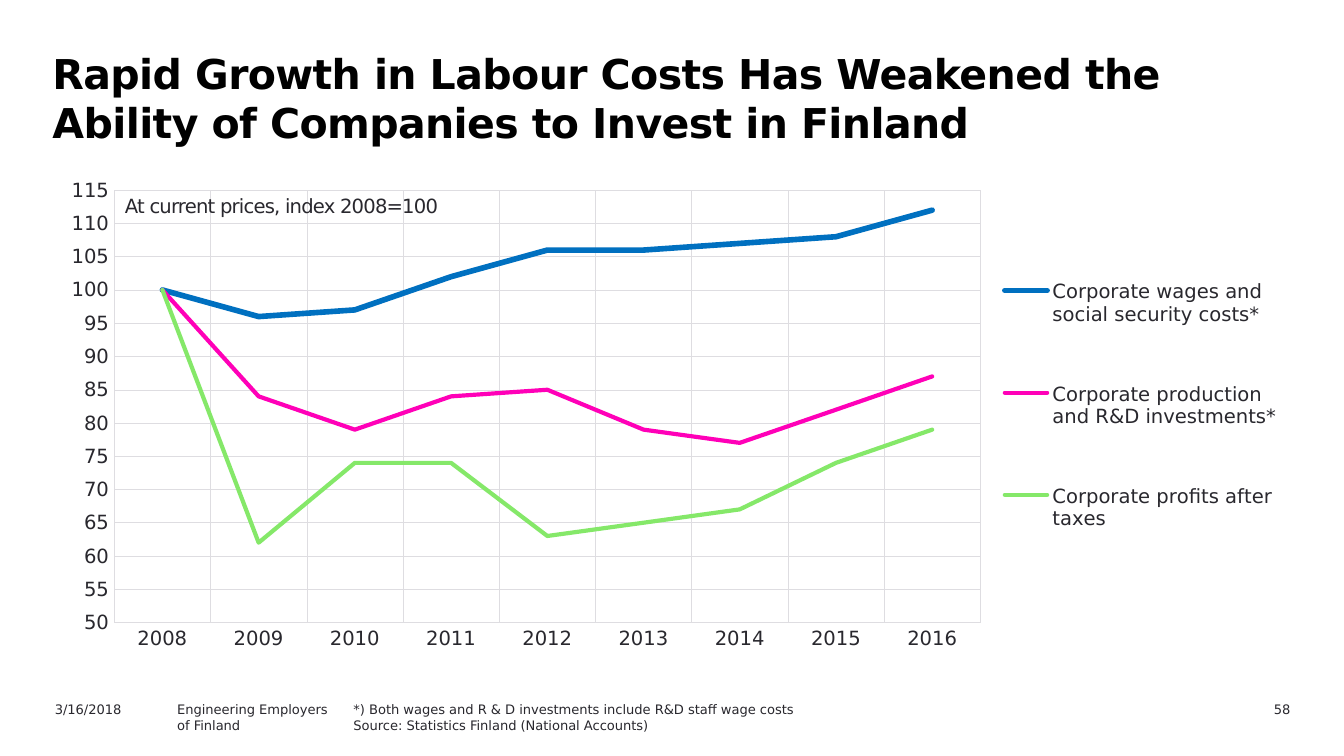
from lxml import etree
from pptx import Presentation, util as u
from pptx.chart import data
from pptx.dml import color
from pptx.enum import chart as ch, text
from pptx.oxml import ns

COLORS = {"title": "000000", "text": "29282E", "grid": "DEDDE1",
          "wages": "0070C0", "investments": "FF00B8", "profits": "85E869"}
WIDTH = 10
HEIGHT = WIDTH * 9 / 16
FOOTER_TOP = 91.9  # percent of the slide height

YEARS = [str(year) for year in range(2008, 2017)]
SERIES = [  # name, colour, line width, values
    ("Corporate wages and social security costs*", "wages", 3,
     (100, 96, 97, 102, 106, 106, 107, 108, 112)),
    ("Corporate production and R&D investments*", "investments", 2.25,
     (100, 84, 79, 84, 85, 79, 77, 82, 87)),
    ("Corporate profits after taxes", "profits", 2.25,
     (100, 62, 74, 74, 63, 65, 67, 74, 79)),
]


def rgb(name):
    return color.RGBColor.from_string(COLORS[name])


class Deck:
    """Style and current slide; areas are percentages of the slide's size."""
    font = "DejaVu Sans"

    def __init__(self):
        self.prs = Presentation()
        self.prs.slide_width = u.Inches(WIDTH)
        self.prs.slide_height = u.Inches(HEIGHT)
        self.s = self.prs.slides.add_slide(self.prs.slide_layouts[1])

    def box(self, area):
        return [u.Inches(part * side / 100)
                for part, side in zip(area, (WIDTH, HEIGHT) * 2)]

    def style(self, font, size, name="text", bold=False):
        font.name, font.size, font.bold = self.font, u.Pt(size), bold
        font.color.rgb = rgb(name)

    def fill_text(self, sp, words, size, name="text", bold=False,
                  align=text.PP_ALIGN.LEFT, spacing=0):
        tf = sp.text_frame
        tf.text = words
        tf.word_wrap = True
        tf.auto_size = text.MSO_AUTO_SIZE.NONE
        tf.vertical_anchor = text.MSO_ANCHOR.TOP
        for p in tf.paragraphs:
            p.alignment, p.space_before = align, u.Pt(0)
            for r in p.runs:
                self.style(r.font, size, name, bold)
                if spacing:
                    r.font._element.set("spc", str(round(spacing * 100)))
        return tf

    def placeholder(self, index, area, words, size, **look):
        sp = self.s.placeholders[index]
        sp.left, sp.top, sp.width, sp.height = self.box(area)
        for p in self.fill_text(sp, words, size, **look).paragraphs:
            pPr = p._p.get_or_add_pPr()
            pPr.set("marL", "0")
            pPr.set("indent", "0")
            etree.SubElement(pPr, ns.qn("a:buNone"))

    def label(self, area, words, size, **look):
        sp = self.s.shapes.add_textbox(*self.box(area))
        return self.fill_text(sp, words, size, **look)

    def place_part(self, parent, index, area, inner=False):
        """Fix a plot area or legend, in percentages of the chart."""
        for old in parent.findall(ns.qn("c:layout")):
            parent.remove(old)
        layout = etree.Element(ns.qn("c:layout"))
        manual = etree.SubElement(layout, ns.qn("c:manualLayout"))
        settings = [("layoutTarget", "inner")] if inner else []
        settings += [("xMode", "edge"), ("yMode", "edge")]
        settings += [(tag, part / 100) for tag, part in zip("xywh", area)]
        for tag, value in settings:
            etree.SubElement(manual, ns.qn("c:" + tag)).set("val", str(value))
        parent.insert(index, layout)

    def axis(self, axis):
        axis.major_tick_mark = axis.minor_tick_mark = ch.XL_TICK_MARK.NONE
        self.style(axis.tick_labels.font, 10.5)
        axis.has_major_gridlines = True
        line = axis.major_gridlines.format.line
        line.color.rgb, line.width = rgb("grid"), u.Pt(0.25)

    def line_chart(self, area, cats, series, low, high, step):
        cd = data.CategoryChartData()
        cd.categories = cats
        for name, _, _, values in series:
            cd.add_series(name, values)
        chart = self.s.shapes.add_chart(
            ch.XL_CHART_TYPE.LINE, *self.box(area), cd).chart
        self.style(chart.font, 10.5)
        chart.has_title = False
        chart.plots[0].vary_by_categories = False
        for ser, (_, name, width, _) in zip(chart.plots[0].series, series):
            ser.smooth = False
            ser.marker.style = ch.XL_MARKER_STYLE.NONE
            line = ser.format.line
            line.color.rgb, line.width = rgb(name), u.Pt(width)
            ser._element.spPr.find(ns.qn("a:ln")).set("cap", "rnd")

        # Axes
        years, values = chart.category_axis, chart.value_axis
        self.axis(years)
        self.axis(values)
        years.format.line.color.rgb = rgb("grid")
        years.format.line.width = u.Pt(0.75)
        values.format.line.fill.background()
        values.minimum_scale, values.maximum_scale = low, high
        values.major_unit = step
        values.tick_labels.number_format = "#,##0"
        values.tick_labels.number_format_is_linked = False

        # Legend and plot area
        chart.has_legend = True
        legend = chart.legend
        legend.position = ch.XL_LEGEND_POSITION.RIGHT
        legend.include_in_layout = False
        self.style(legend.font, 10.5)
        self.place_part(legend._element, 1, (76, 9, 24, 72))
        plot_area = chart._chartSpace.chart.plotArea
        self.place_part(plot_area, 0, (4.8, 2.5, 70.2, 85.5), inner=True)


def main():
    d = Deck()

    # Title
    d.placeholder(0, (2.9, 5.5, 87.4, 12.6),
                  "Rapid Growth in Labour Costs Has Weakened the "
                  "Ability of Companies to Invest in Finland",
                  22, name="title", bold=True, spacing=-0.3)

    # Chart with its unit
    d.line_chart((4.1, 23.5, 91.8, 66.9), YEARS, SERIES, 50, 115, 5)
    tf = d.label((8.9, 24.9, 39.4, 4.6),
                 "At current prices, index 2008=100", 10.5, spacing=-0.4)
    tf.margin_left = tf.margin_top = tf.margin_right = tf.margin_bottom = \
        u.Inches(0.04)

    # Footer
    d.label((3.1, FOOTER_TOP, 10, 3.2), "3/16/2018", 7)
    d.label((12.2, FOOTER_TOP, 18, 3.2),
            "Engineering Employers\nof Finland", 7)
    d.placeholder(1, (25.3, FOOTER_TOP, 50, 8),
                  "*) Both wages and R & D investments include R&D staff "
                  "wage costs\nSource: Statistics Finland (National Accounts)",
                  7)
    d.label((87.6, FOOTER_TOP, 9.4, 3.2), "58", 7,
            align=text.PP_ALIGN.RIGHT)

    d.prs.save("out.pptx")


if __name__ == "__main__":
    main()
